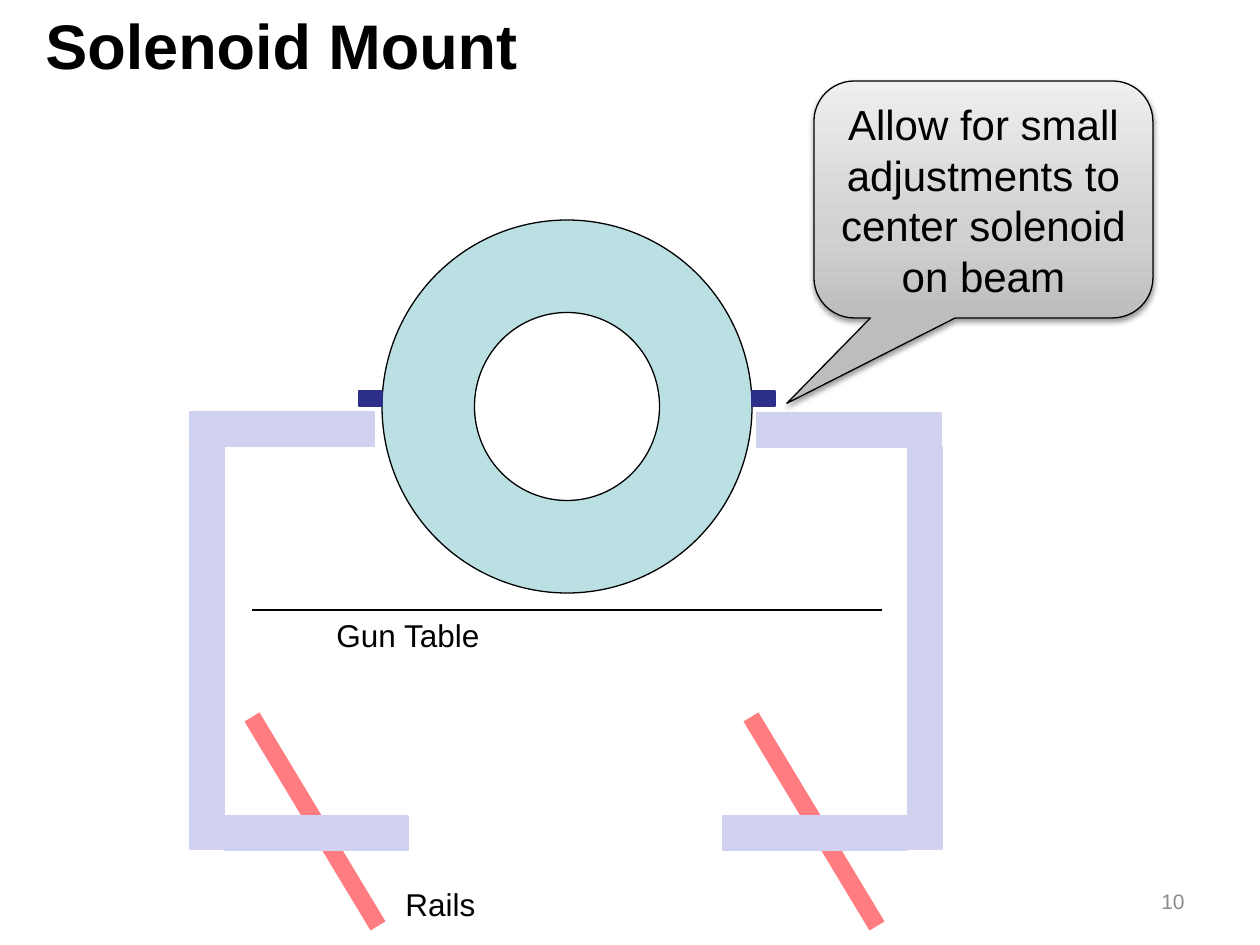
"""Build the Solenoid Mount slide."""
from lxml import etree
from pptx import Presentation
from pptx.dml.color import RGBColor
from pptx.enum.shapes import MSO_CONNECTOR, MSO_SHAPE
from pptx.enum.text import MSO_ANCHOR, PP_ALIGN
from pptx.oxml import parse_xml
from pptx.oxml.ns import nsdecls, qn
from pptx.util import Pt

STRAIGHT = MSO_CONNECTOR.STRAIGHT
RECTANGLE, DONUT = MSO_SHAPE.RECTANGLE, MSO_SHAPE.DONUT
CALLOUT = MSO_SHAPE.ROUNDED_RECTANGULAR_CALLOUT
TOP, MIDDLE = MSO_ANCHOR.TOP, MSO_ANCHOR.MIDDLE
LEFT, CENTER, RIGHT = PP_ALIGN.LEFT, PP_ALIGN.CENTER, PP_ALIGN.RIGHT

EMU_PER_PX = 914400 / 126
FONT = "Arial"
BLACK, GREY, RAIL, COIL = "000000", "8C8C8C", "FF7C80", "BBE0E3"
PIN, FRAME = "2D2D8A", "D1D1F0"

TITLE = ("Solenoid Mount", (33, 0, 1227, 121), 36, True)
PAGE_NUMBER = ("10", (903, 876, 294, 50))
LABELS = [("Gun Table", (324, 610, 170, 50)), ("Rails", (393, 879, 96, 50))]
ADVICE = "Allow for small adjustments to center solenoid on beam"
ADVICE_BOX = (814, 81, 339, 237)
ADVICE_SHAPE = (-0.58, 0.86, 0.17)
ADVICE_STOPS = [(0, "BDBDBD"), (35, "D1D1D1"), (100, "EEEEEE")]

SOLENOID = (382, 220, 370, 373)
PINS = [(752, 391, 23, 15), (359, 391, 23, 15)]
BEAM, THICK, POST = 184, 34, 402
BEAMS = [(757, 413), (190, 412), (723, 816), (224, 816)]
POSTS = [(908, 447), (190, 447)]
RAIL_LEFTS, RAIL_TOP, RAIL_RUN, RAIL_DROP = (751, 252), 717, 126, 209
GUN_TABLE = (252, 610, 882, 610)


def px(*lengths):
    return [round(length * EMU_PER_PX) for length in lengths]


def rgb(color):
    return RGBColor.from_string(color)


def add_line(slide, ends, color, width):
    line = slide.shapes.add_connector(STRAIGHT, *px(*ends))
    line.line.color.rgb = rgb(color)
    line.line.width = Pt(width)
    etree.SubElement(line._element.spPr, qn("a:effectLst"))


def add_part(slide, kind, box, fill, outline):
    part = slide.shapes.add_shape(kind, *px(*box))
    part.shadow.inherit = False
    part.fill.solid()
    part.fill.fore_color.rgb = rgb(fill)
    part.line.color.rgb = rgb(outline)
    part.line.width = Pt(0.75)
    return part


def write(frame, words, size, color=BLACK, bold=False, align=LEFT, anchor=TOP, wrap=True):
    frame.word_wrap = wrap
    frame.vertical_anchor = anchor
    paragraph = frame.paragraphs[0]
    paragraph.alignment = align
    run = paragraph.add_run()
    run.text = words
    run.font.name = FONT
    run.font.size = Pt(size)
    run.font.bold = bold
    run.font.color.rgb = rgb(color)


def add_text(slide, words, box, size, **style):
    write(slide.shapes.add_textbox(*px(*box)).text_frame, words, size, **style)


def add_advice(slide):
    advice = add_part(slide, CALLOUT, ADVICE_BOX, ADVICE_STOPS[0][1], BLACK)
    for index, value in enumerate(ADVICE_SHAPE):
        advice.adjustments[index] = value
    stops = "".join(
        f'<a:gs pos="{pos * 1000}"><a:srgbClr val="{color}"/></a:gs>'
        for pos, color in ADVICE_STOPS
    )
    gradient = parse_xml(
        f'<a:gradFill {nsdecls("a")} rotWithShape="1"><a:gsLst>{stops}</a:gsLst>'
        '<a:lin ang="16200000" scaled="0"/></a:gradFill>'
    )
    shadow = parse_xml(
        f'<a:outerShdw {nsdecls("a")} blurRad="{Pt(3.1)}" dist="{Pt(1.6)}" dir="5400000" '
        f'rotWithShape="0"><a:srgbClr val="{BLACK}"><a:alpha val="38000"/></a:srgbClr></a:outerShdw>'
    )
    properties = advice._element.spPr
    properties.replace(properties.find(qn("a:solidFill")), gradient)
    properties.find(qn("a:effectLst")).append(shadow)
    write(advice.text_frame, ADVICE, 24, align=CENTER)


def main():
    deck = Presentation()
    deck.slide_width, deck.slide_height = px(1260, 945)
    slide = deck.slides.add_slide(deck.slide_layouts[6])

    for left in RAIL_LEFTS:
        add_line(slide, (left, RAIL_TOP, left + RAIL_RUN, RAIL_TOP + RAIL_DROP), RAIL, 10)
    add_text(slide, *PAGE_NUMBER, 12, color=GREY, align=RIGHT, anchor=MIDDLE)
    add_part(slide, DONUT, SOLENOID, COIL, BLACK)
    words, box, size, bold = TITLE
    add_text(slide, words, box, size, bold=bold)
    for pin in PINS:
        add_part(slide, RECTANGLE, pin, PIN, PIN)
    add_line(slide, GUN_TABLE, BLACK, 0.75)
    for corners, extent in ((BEAMS, (BEAM, THICK)), (POSTS, (THICK, POST))):
        for corner in corners:
            add_part(slide, RECTANGLE, corner + extent, FRAME, FRAME)
    for words, box in LABELS:
        add_text(slide, words, box, 18, wrap=False)
    add_advice(slide)
    deck.save("out.pptx")


if __name__ == "__main__":
    main()
